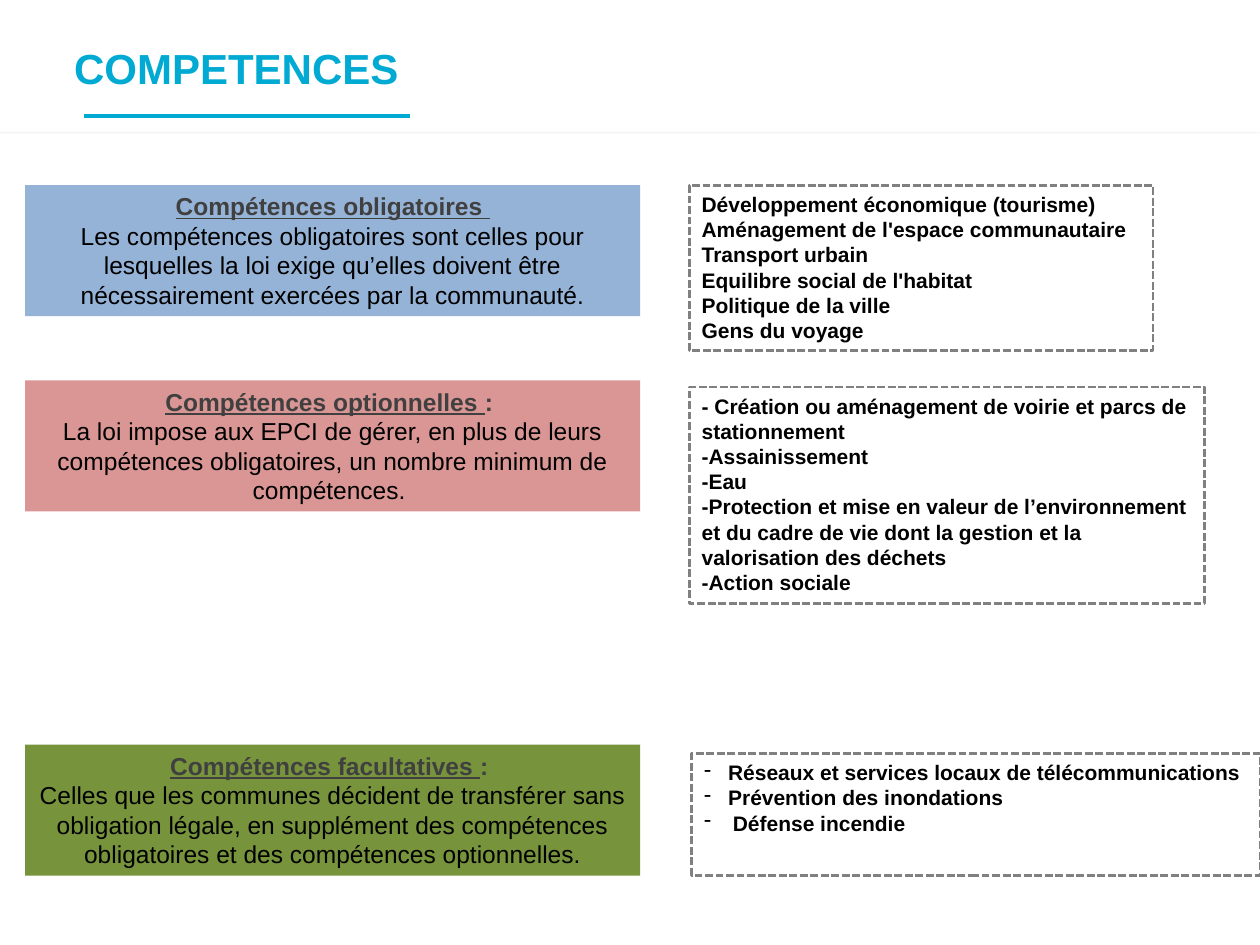
from dataclasses import dataclass

from lxml.etree import SubElement
from pptx import Presentation
from pptx.dml.color import RGBColor
from pptx.enum.dml import MSO_LINE
from pptx.enum.shapes import MSO_CONNECTOR, MSO_SHAPE
from pptx.enum.text import MSO_ANCHOR, MSO_AUTO_SIZE, PP_ALIGN
from pptx.oxml.ns import qn
from pptx.util import Inches, Pt


@dataclass(frozen=True)
class Theme:
    face: str = "Arial"
    plain: str = "Calibri"
    accent: str = "00AAD3"
    paper: str = "FFFFFF"
    ink: str = "000000"
    head: str = "404040"
    edge: str = "808080"
    blue: str = "95B3D7"
    red: str = "D99694"
    green: str = "77933C"
    title: int = 24
    body: int = 14
    list: int = 12


THEME = Theme()
WIDE, HIGH = Inches(10), Inches(7.5)
COLS, ROWS = 100, 75
LEFT, RIGHT = 2, 54.7
SPAN, TALL = 48.8, 10.4

BLOCKS = [
    (14.7, THEME.blue, "Compétences obligatoires ", "",
     "Les compétences obligatoires sont celles pour lesquelles la loi exige "
     "qu’elles doivent être nécessairement exercées par la communauté."),
    (30.2, THEME.red, "Compétences optionnelles ", ": ",
     "La loi impose aux EPCI de gérer, en plus de leurs compétences "
     "obligatoires, un nombre minimum de compétences. "),
    (59.1, THEME.green, "Compétences facultatives ", ": ",
     "Celles que les communes décident de transférer sans obligation légale, "
     "en supplément des compétences obligatoires et des compétences "
     "optionnelles."),
]

LISTS = [
    ((RIGHT, 14.7, 36.8, 13.1), False, [
        "Développement économique (tourisme) Aménagement de l'espace "
        "communautaire Transport urbain",
        "Equilibre social de l'habitat",
        "Politique de la ville",
        "Gens du voyage",
    ]),
    ((RIGHT, 30.7, 40.9, 17.2), False, [
        "- Création ou aménagement de voirie et parcs de stationnement",
        "-Assainissement",
        "-Eau",
        "-Protection et mise en valeur de l’environnement et du cadre de vie "
        "dont la gestion et la valorisation des déchets",
        "-Action sociale",
    ]),
    ((54.9, 59.8, 45.1, 9.7), True, [
        "Réseaux et services locaux de télécommunications",
        "Prévention des inondations",
        " Défense incendie",
    ]),
]


def place(col, row, wide=0, high=0):
    return (int(WIDE * col / COLS), int(HIGH * row / ROWS),
            int(WIDE * wide / COLS), int(HIGH * high / ROWS))


def add_box(slide, spot, fill=None, edge=None):
    box = slide.shapes.add_shape(MSO_SHAPE.RECTANGLE, *place(*spot))
    box.shadow.inherit = False
    if fill:
        box.fill.solid()
        box.fill.fore_color.rgb = RGBColor.from_string(fill)
    else:
        box.fill.background()
    if edge:
        box.line.color.rgb = RGBColor.from_string(edge)
        box.line.width = Pt(1.5)
        box.line.dash_style = MSO_LINE.SQUARE_DOT
    else:
        box.line.fill.background()
    return box


def set_frame(box, anchor=MSO_ANCHOR.TOP, fit=MSO_AUTO_SIZE.NONE):
    frame = box.text_frame
    looks = {"word_wrap": True, "vertical_anchor": anchor, "auto_size": fit}
    for name, value in looks.items():
        setattr(frame, name, value)
    return frame


def add_run(para, text, size, color=THEME.ink, face=THEME.face, **looks):
    run = para.add_run()
    run.text = text
    looks = {"name": face, "size": Pt(size), **looks}
    for name, value in looks.items():
        setattr(run.font, name, value)
    run.font.color.rgb = RGBColor.from_string(color)


def next_para(frame, first, align=PP_ALIGN.LEFT):
    para = frame.paragraphs[0] if first else frame.add_paragraph()
    para.alignment = align
    return para


def add_dash(para):
    props = para._p.get_or_add_pPr()
    props.set("marL", str(Inches(0.19)))
    props.set("indent", str(-Inches(0.19)))
    SubElement(props, qn("a:buChar"), char="-")


def add_panel(slide):
    panel = add_box(slide, (0, 10.6, 100, 64.4), THEME.paper)
    glow = SubElement(panel._element.spPr.find(qn("a:effectLst")),
                      qn("a:outerShdw"), blurRad=str(Pt(3.1)),
                      dist=str(Pt(1.8)), dir="5400000", rotWithShape="0")
    tint = SubElement(glow, qn("a:srgbClr"), val=THEME.ink)
    SubElement(tint, qn("a:alpha"), val="35000")


def add_title(slide, text):
    box = slide.shapes.add_textbox(*place(4.9, 0, 90.1, 10.8))
    frame = set_frame(box, MSO_ANCHOR.MIDDLE)
    add_run(next_para(frame, True), text, THEME.title, THEME.accent, bold=True)


def add_rule(slide):
    start, end = place(6.7, 9.2), place(32.5, 9.2)
    rule = slide.shapes.add_connector(
        MSO_CONNECTOR.STRAIGHT, *start[:2], *end[:2])
    rule.line.color.rgb = RGBColor.from_string(THEME.accent)
    rule.line.width = Pt(2)
    SubElement(rule._element.spPr, qn("a:effectLst"))


def add_block(slide, row, fill, head, mark, text):
    box = add_box(slide, (LEFT, row, SPAN, TALL), fill)
    frame = set_frame(box, fit=MSO_AUTO_SIZE.SHAPE_TO_FIT_TEXT)
    top = next_para(frame, True, PP_ALIGN.CENTER)
    add_run(top, head, THEME.body, THEME.head, bold=True, underline=True)
    if mark:
        add_run(top, mark, THEME.body, THEME.head, bold=True)
    add_run(next_para(frame, False, PP_ALIGN.CENTER), text, THEME.body)


def add_list(slide, spot, dashed, items):
    box = add_box(slide, spot, edge=THEME.edge)
    fit = MSO_AUTO_SIZE.NONE if dashed else MSO_AUTO_SIZE.SHAPE_TO_FIT_TEXT
    frame = set_frame(box, fit=fit)
    for rank, item in enumerate(items):
        para = next_para(frame, rank == 0)
        if dashed:
            add_dash(para)
        if item.startswith(" "):
            add_run(para, " ", THEME.list, face=THEME.plain, bold=True)
        add_run(para, item.lstrip(" "), THEME.list, bold=True)


def main():
    deck = Presentation()
    deck.slide_width, deck.slide_height = WIDE, HIGH
    slide = deck.slides.add_slide(deck.slide_layouts[6])
    add_rule(slide)
    add_panel(slide)
    add_title(slide, "COMPETENCES")
    for block in BLOCKS:
        add_block(slide, *block)
    for entry in LISTS:
        add_list(slide, *entry)
    deck.save("out.pptx")


if __name__ == "__main__":
    main()
